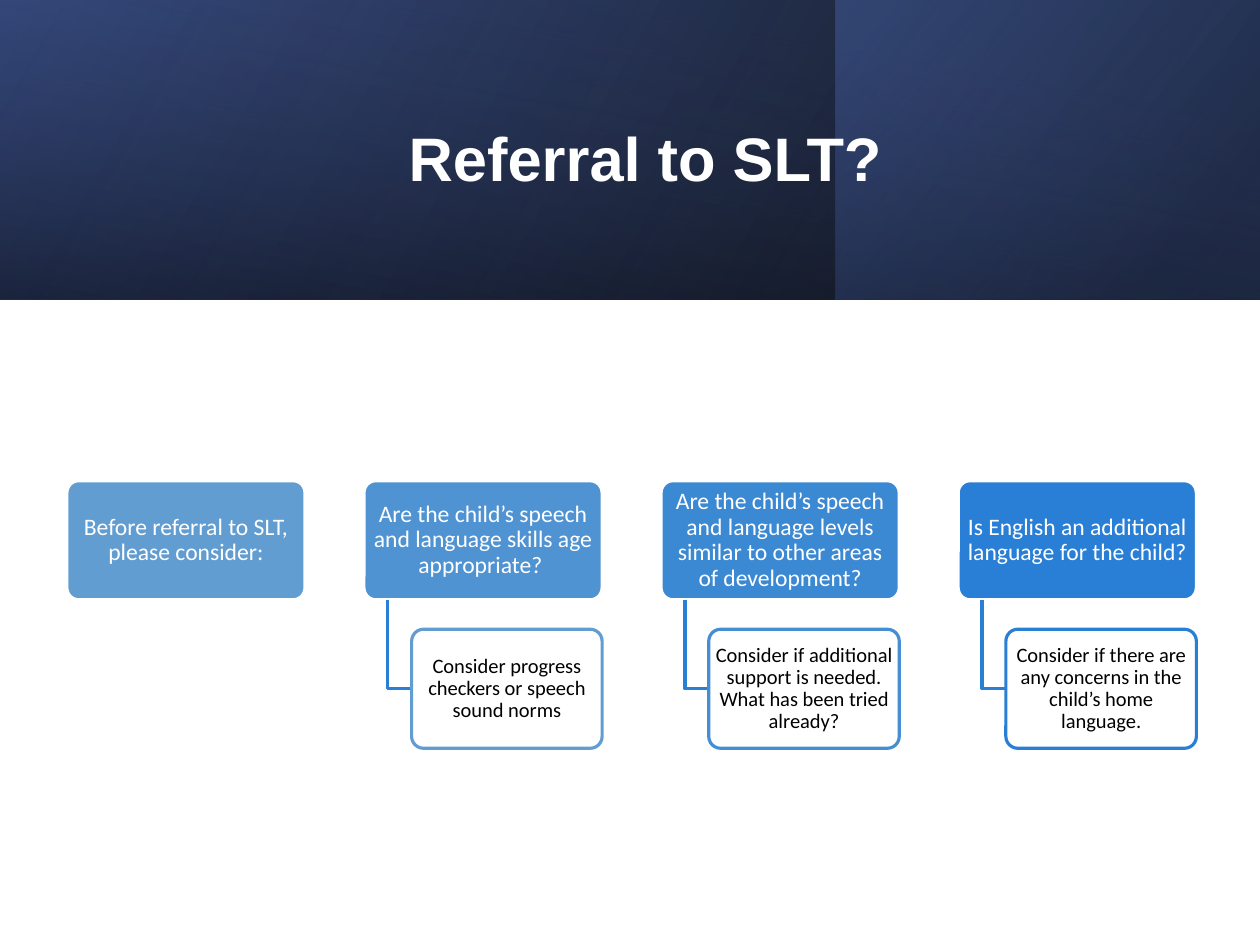
from lxml.etree import SubElement
from pptx import Presentation
from pptx.dml.color import RGBColor
from pptx.enum.shapes import MSO_SHAPE as Shape
from pptx.enum.text import MSO_ANCHOR as Anchor, MSO_AUTO_SIZE as AutoSize, PP_ALIGN as Align
from pptx.oxml.ns import qn
from pptx.util import Inches, Pt

WHITE = RGBColor(0xFF, 0xFF, 0xFF)
BLACK = RGBColor(0x00, 0x00, 0x00)
NAVY = RGBColor(0x38, 0x4C, 0x81)
DARK_NAVY = RGBColor(0x25, 0x33, 0x56)
INDIGO = RGBColor(0x4A, 0x66, 0xAC)
PALE_BLUE = RGBColor(0x62, 0x9D, 0xD1)
SOFT_BLUE = RGBColor(0x50, 0x93, 0xD2)
MID_BLUE = RGBColor(0x46, 0x8E, 0xD2)
CLEAR_BLUE = RGBColor(0x3C, 0x89, 0xD3)
STRONG_BLUE = RGBColor(0x29, 0x7F, 0xD5)

WIDTH, HEIGHT = Pt(800), Pt(600.13)
BAND_HEIGHT = 2.64
PANEL_LEFT = 7.37
FIRST_COLUMN, COLUMN_STEP = 0.59, 2.62
QUESTION_TOP, ADVICE_TOP = 4.24, 5.55
QUESTION_WIDTH, ADVICE_WIDTH, BOX_HEIGHT = 2.1, 1.68, 1.05
INDENT = 0.21

presentation = Presentation()
presentation.slide_width = WIDTH
presentation.slide_height = HEIGHT
slide = presentation.slides.add_slide(presentation.slide_layouts[5])
shapes = slide.shapes


def format_text(shape, text, font_name, size, color, margin_x, margin_y, spacing):
    frame = shape.text_frame
    frame.text = text
    frame.word_wrap = True
    frame.auto_size = AutoSize.NONE
    frame.vertical_anchor = Anchor.MIDDLE
    frame.margin_left = frame.margin_right = Inches(margin_x)
    frame.margin_top = frame.margin_bottom = Inches(margin_y)
    paragraph = frame.paragraphs[0]
    paragraph.alignment = Align.CENTER
    paragraph.line_spacing = spacing
    font = paragraph.runs[0].font
    font.name, font.size, font.color.rgb = font_name, Pt(size), color
    return font


def add_box(left, top, width, text, size, fill, line, color):
    box = shapes.add_shape(Shape.ROUNDED_RECTANGLE, Inches(left), Inches(top),
                           Inches(width), Inches(BOX_HEIGHT))
    box.adjustments[0] = 0.1
    box.shadow.inherit = False
    box.fill.solid()
    box.fill.fore_color.rgb = fill
    box.line.color.rgb = line
    box.line.width = Pt(2)
    format_text(box, text, "Calibri", size, color, 0.03, 0.02, 0.9)


bands = [
    (0, 150, [(0, BLACK, 96), (1, NAVY, 100)]),
    (PANEL_LEFT, 140, [(0.19, DARK_NAVY, 68), (1, INDIGO, 48)]),
    (0, 260, [(0.23, NAVY, 16), (0.99, BLACK, 45)]),
]
for left, angle, stops in bands:
    band = shapes.add_shape(Shape.RECTANGLE, Inches(left), 0,
                            WIDTH - Inches(left), Inches(BAND_HEIGHT))
    band.shadow.inherit = False
    band.line.fill.background()
    band.fill.gradient()
    band.fill.gradient_angle = angle
    for stop, (position, color, opacity) in zip(band.fill.gradient_stops, stops):
        stop.position = position
        stop.color.rgb = color
    colors = band._element.spPr.iter(qn("a:srgbClr"))
    for element, (position, color, opacity) in zip(list(colors), stops):
        SubElement(element, qn("a:alpha")).set("val", str(opacity * 1000))

title = shapes.title
title.left, title.top = Inches(1.26), Inches(0.42)
title.width, title.height = Inches(8.86), Inches(1.92)
format_text(title, "Referral to SLT?", "Arial", 39, WHITE, 0.11, 0.06, 1.0).bold = True
shapes._spTree.append(title._element)

columns = [
    ("Before referral to SLT, please consider:", PALE_BLUE, None, None),
    ("Are the child’s speech and language skills age appropriate? ", SOFT_BLUE,
     "Consider progress checkers or speech sound norms", PALE_BLUE),
    ("Are the child’s speech and language levels similar to other areas of development?",
     CLEAR_BLUE,
     "Consider if additional support is needed. What has been tried already?", MID_BLUE),
    ("Is English an additional language for the child?", STRONG_BLUE,
     "Consider if there are any concerns in the child’s home language.", STRONG_BLUE),
]
for index, (question, fill, advice, outline) in enumerate(columns):
    left = FIRST_COLUMN + index * COLUMN_STEP
    add_box(left, QUESTION_TOP, QUESTION_WIDTH, question, 15, fill, WHITE, WHITE)
    if advice:
        stem = Inches(left + INDENT)
        advice_left = left + 2 * INDENT
        middle = Inches(ADVICE_TOP + BOX_HEIGHT / 2)
        builder = shapes.build_freeform(stem, Inches(QUESTION_TOP + BOX_HEIGHT))
        builder.add_line_segments([(stem, middle), (Inches(advice_left), middle)], close=False)
        branch = builder.convert_to_shape()
        branch.shadow.inherit = False
        branch.fill.background()
        branch.line.color.rgb = STRONG_BLUE
        branch.line.width = Pt(2)
        add_box(advice_left, ADVICE_TOP, ADVICE_WIDTH, advice, 13, WHITE, outline, BLACK)

presentation.save("out.pptx")
